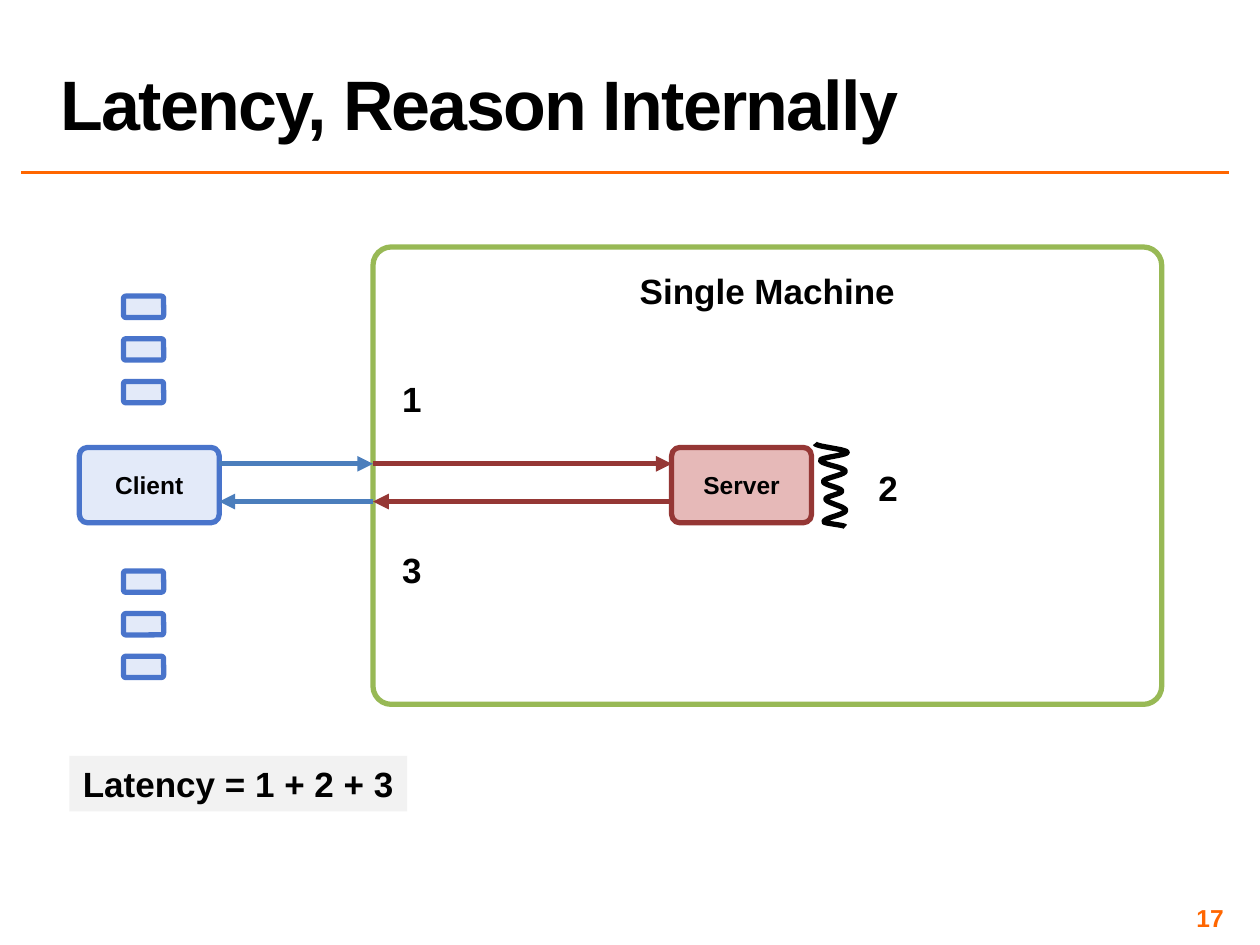
import math
import lxml.etree
import pptx
import pptx.util
import pptx.dml.color
import pptx.enum.shapes
import pptx.enum.text
import pptx.oxml.ns

Cm, Pt = pptx.util.Cm, pptx.util.Pt
SHAPE = pptx.enum.shapes.MSO_SHAPE
ALIGN = pptx.enum.text.PP_ALIGN
ANCHOR = pptx.enum.text.MSO_ANCHOR
AUTO = pptx.enum.text.MSO_AUTO_SIZE

COLORS = {
    "text": "000000", "accent": "FF6600", "client": "4974CB",
    "client_fill": "E3EAF9", "request": "4B7EBC", "server": "953735",
    "server_fill": "E6B9B8", "machine": "98B955", "note": "F2F2F2",
}


def rgb(name):
    return pptx.dml.color.RGBColor.from_string(COLORS[name])


def write(tf, text, size=20, color="text", align=ALIGN.CENTER,
          anchor=ANCHOR.MIDDLE, font="Arial"):
    """Put one formatted paragraph into a text frame and return it."""
    tf.vertical_anchor = anchor
    p = tf.paragraphs[0]
    p.alignment = align
    r = p.add_run()
    r.text = text
    r.font.name, r.font.size, r.font.bold = font, Pt(size), True
    r.font.color.rgb = rgb(color)
    return p


class Deck:
    """Holds the shared style and the current slide."""
    line_width = 3

    def __init__(self, prs):
        self.s = prs.slides.add_slide(prs.slide_layouts[5])

    def style(self, sp, fill=None, line=None):
        sp.shadow.inherit = False
        if fill:
            sp.fill.solid()
            sp.fill.fore_color.rgb = rgb(fill)
        else:
            sp.fill.background()
        if line:
            sp.line.color.rgb = rgb(line)
            sp.line.width = Pt(self.line_width)
        else:
            sp.line.fill.background()

    def title(self, text, x, y, w, h):
        sp = self.s.shapes.title
        sp.left, sp.top, sp.width, sp.height = Cm(x), Cm(y), Cm(w), Cm(h)
        sp.text_frame.auto_size = AUTO.NONE
        p = write(sp.text_frame, text, size=40, align=ALIGN.LEFT,
                  anchor=ANCHOR.BOTTOM)
        p.line_spacing = 0.8
        p.runs[0].font._element.set("spc", "-100")

    def box(self, x, y, w, h, fill=None, line=None, radius=0.11):
        sp = self.s.shapes.add_shape(SHAPE.ROUNDED_RECTANGLE,
                                     Cm(x), Cm(y), Cm(w), Cm(h))
        sp.adjustments[0] = radius
        self.style(sp, fill, line)
        return sp

    def label(self, text, x, y, w, h, fill=None, **fmt):
        sp = self.s.shapes.add_textbox(Cm(x), Cm(y), Cm(w), Cm(h))
        if fill:
            sp.fill.solid()
            sp.fill.fore_color.rgb = rgb(fill)
        sp.text_frame.word_wrap = False
        write(sp.text_frame, text, **fmt)
        return sp

    def line(self, x1, y1, x2, y2, color, width=line_width, arrow=True):
        c = self.s.shapes.add_connector(
            pptx.enum.shapes.MSO_CONNECTOR.STRAIGHT,
            Cm(x1), Cm(y1), Cm(x2), Cm(y2))
        c.line.color.rgb, c.line.width = rgb(color), Pt(width)
        qn = pptx.oxml.ns.qn
        sp_pr = c._element.find(qn("p:spPr"))
        if arrow:
            lxml.etree.SubElement(sp_pr.find(qn("a:ln")), qn("a:tailEnd"),
                                  type="triangle")
        lxml.etree.SubElement(sp_pr, qn("a:effectLst"))

    def squiggle(self, turns, color, steps=10):
        """Draw a smooth wave that swings from one turning point to the next."""
        points = []
        for (x1, y1), (x2, y2) in zip(turns, turns[1:]):
            for i in range(1, steps + 1):
                t = i / steps
                swing = (1 - math.cos(math.pi * t)) / 2
                points.append((Cm(x1 + (x2 - x1) * swing),
                               Cm(y1 + (y2 - y1) * t)))
        x, y = turns[0]
        fb = self.s.shapes.build_freeform(Cm(x), Cm(y))
        fb.add_line_segments(points, close=False)
        self.style(fb.convert_to_shape(), line=color)


def main():
    prs = pptx.Presentation()
    prs.slide_width, prs.slide_height = Cm(25.4), Cm(19.05)
    d = Deck(prs)

    # Title and rule
    d.line(0.43, 3.48, 24.77, 3.48, "accent", width=2, arrow=False)
    d.title("Latency, Reason Internally", 0.97, 0.05, 23.8, 2.97)

    # Machine frame
    machine_x, client_x, server_x = 7.52, 1.6, 13.54
    sp = d.box(machine_x, 4.98, 15.9, 9.22, line="machine", radius=0.04)
    sp.text_frame.margin_top = Cm(0.34)
    write(sp.text_frame, "Single Machine", anchor=ANCHOR.TOP)

    # Client, server and the other clients
    node_y, node_w, node_h = 9.02, 2.82, 1.52
    for text, x, name in (("Client", client_x, "client"),
                          ("Server", server_x, "server")):
        sp = d.box(x, node_y, node_w, node_h, name + "_fill", name)
        write(sp.text_frame, text, size=14)
    for top in (5.97, 11.51):
        for i in range(3):
            d.box(2.49, top + i * 0.86, 0.81, 0.43, "client_fill", "client")

    # Request and reply arrows
    for x1, x2, color in ((client_x + node_w, machine_x, "request"),
                          (machine_x, server_x, "server")):
        d.line(x1, 9.35, x2, 9.35, color)
        d.line(x2, 10.11, x1, 10.11, color)

    # Work inside the server
    d.squiggle([(16.43, 8.94), (17.08, 9.12), (16.54, 9.28), (17.04, 9.5),
                (16.6, 9.71), (16.97, 9.9), (16.65, 10.06), (17.05, 10.29),
                (16.61, 10.52), (17.04, 10.62)], "text")

    # Step numbers
    for text, x, y in (("1", 7.85, 7.47), ("2", 17.45, 9.27),
                       ("3", 7.85, 10.92)):
        d.label(text, x, y, 0.91, 1.12)

    # Formula and page number
    d.label("Latency = 1 + 2 + 3", 1.4, 15.24, 6.81, 1.12, fill="note")
    tf = d.label("17", 18.85, 18.21, 5.92, 0.58, size=14, color="accent",
                 align=ALIGN.RIGHT).text_frame
    tf.word_wrap = True
    tf.margin_left = tf.margin_right = Cm(0.1)
    tf.margin_top = tf.margin_bottom = Cm(0.1)

    prs.save("out.pptx")


if __name__ == "__main__":
    main()
